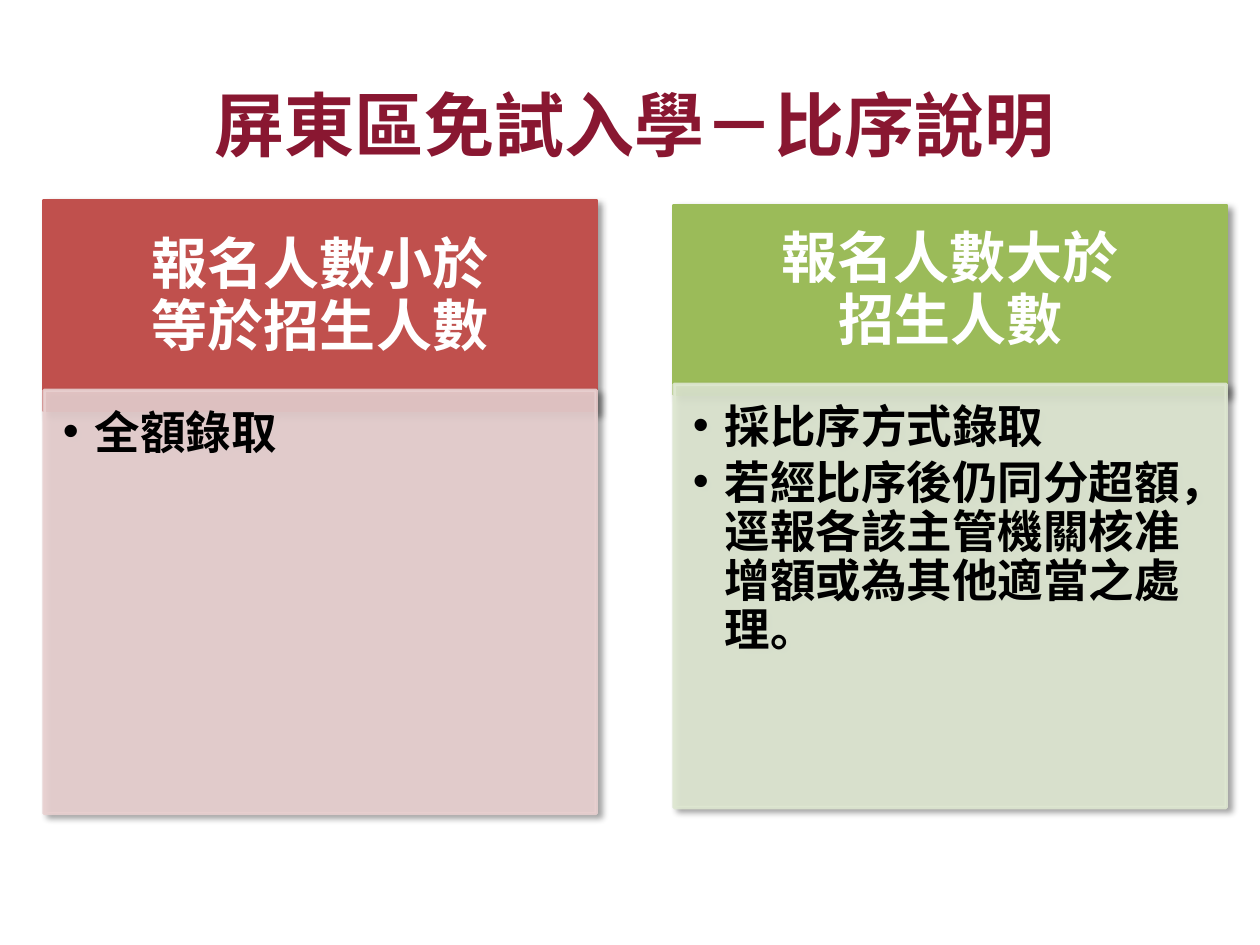
from lxml.etree import SubElement
from pptx import Presentation
from pptx.dml.color import RGBColor
from pptx.enum.shapes import MSO_SHAPE
from pptx.enum.text import MSO_ANCHOR as ANCHOR, MSO_AUTO_SIZE, PP_ALIGN as ALIGN
from pptx.oxml.ns import qn
from pptx.util import Cm, Pt

FONT = "Noto Sans CJK SC"


def rgb(value):
    return RGBColor.from_string(value)


def write(tf, lines, fmt, size, color, bullet=False):
    """Fill a text frame with bold paragraphs that share one format."""
    tf.word_wrap = True
    tf.auto_size = MSO_AUTO_SIZE.NONE
    for i, line in enumerate(lines):
        p = tf.paragraphs[0] if i == 0 else tf.add_paragraph()
        if bullet:
            pPr = p._p.get_or_add_pPr()
            pPr.set("marL", str(Cm(0.64)))
            pPr.set("indent", str(-Cm(0.64)))
            SubElement(pPr, qn("a:buFont"), typeface="Arial")
            SubElement(pPr, qn("a:buChar"), char="•")
        for name, value in fmt.items():
            setattr(p, name, value)
        r = p.add_run()
        r.text = line
        for name, value in {"name": FONT, "size": Pt(size), "bold": True}.items():
            setattr(r.font, name, value)
        r.font.color.rgb = rgb(color)
        SubElement(r._r.get_or_add_rPr(), qn("a:ea"), typeface=FONT)


prs = Presentation()
prs.slide_width, prs.slide_height = Cm(25.4), Cm(19.05)
s = prs.slides.add_slide(prs.slide_layouts[5])

title = s.shapes.title
title.left, title.top, title.width, title.height = Cm(0.89), Cm(1.52), Cm(23.8), Cm(1.96)
title.text_frame.vertical_anchor = ANCHOR.MIDDLE
write(title.text_frame, ["屏東區免試入學－比序說明"],
      {"alignment": ALIGN.CENTER, "space_before": Pt(0)}, 40, "891731")

head_style = {
    "frame": {"vertical_anchor": ANCHOR.MIDDLE,
              "margin_left": Cm(0.64), "margin_right": Cm(0.64),
              "margin_top": Cm(0.36), "margin_bottom": Cm(0.36)},
    "fmt": {"alignment": ALIGN.CENTER, "line_spacing": Pt(24), "space_after": Pt(11.2)},
    "size": 32, "color": "FFFFFF", "bullet": False, "alpha": 100,
}
body_style = {
    "frame": {"vertical_anchor": ANCHOR.TOP,
              "margin_left": Cm(0.38), "margin_right": Cm(0.5),
              "margin_top": Cm(0.38), "margin_bottom": Cm(0.58)},
    "fmt": {"alignment": ALIGN.LEFT, "line_spacing": Pt(28), "space_after": Pt(3.9)},
    "size": 26, "color": "000000", "bullet": True, "alpha": 90,
}

# left, top, height, fill, style, lines
panels = [
    (0.89, 4.04, 4.24, "C0504D", head_style, ["報名人數小於", "等於招生人數"]),
    (0.89, 7.87, 8.53, "E8D0D0", body_style, ["全額錄取"]),
    (13.59, 4.14, 3.81, "9BBB59", head_style, ["報名人數大於", "招生人數"]),
    (13.59, 7.75, 8.53, "DEE7D1", body_style,
     ["採比序方式錄取",
      "若經比序後仍同分超額，逕報各該主管機關核准增額或為其他適當之處理。"]),
]
for left, top, height, fill, style, lines in panels:
    sp = s.shapes.add_shape(MSO_SHAPE.RECTANGLE, Cm(left), Cm(top), Cm(11.13), Cm(height))
    sp.fill.solid()
    sp.fill.fore_color.rgb = rgb(fill)
    sp.line.color.rgb = rgb(fill)
    sp.line.width = Pt(2)
    spPr = sp._element.spPr
    if style["alpha"] < 100:
        for clr in list(spPr.iter(qn("a:srgbClr"))):
            SubElement(clr, qn("a:alpha"), val=str(style["alpha"] * 1000))

    sp.shadow.inherit = False
    shadow = SubElement(spPr.find(qn("a:effectLst")), qn("a:outerShdw"),
                        blurRad=str(Pt(4)), dist=str(Pt(3)), dir=str(45 * 60000),
                        rotWithShape="0")
    black = SubElement(shadow, qn("a:srgbClr"), val="000000")
    SubElement(black, qn("a:alpha"), val="40000")

    tf = sp.text_frame
    for name, value in style["frame"].items():
        setattr(tf, name, value)
    write(tf, lines, style["fmt"], style["size"], style["color"], style["bullet"])

prs.save("out.pptx")
